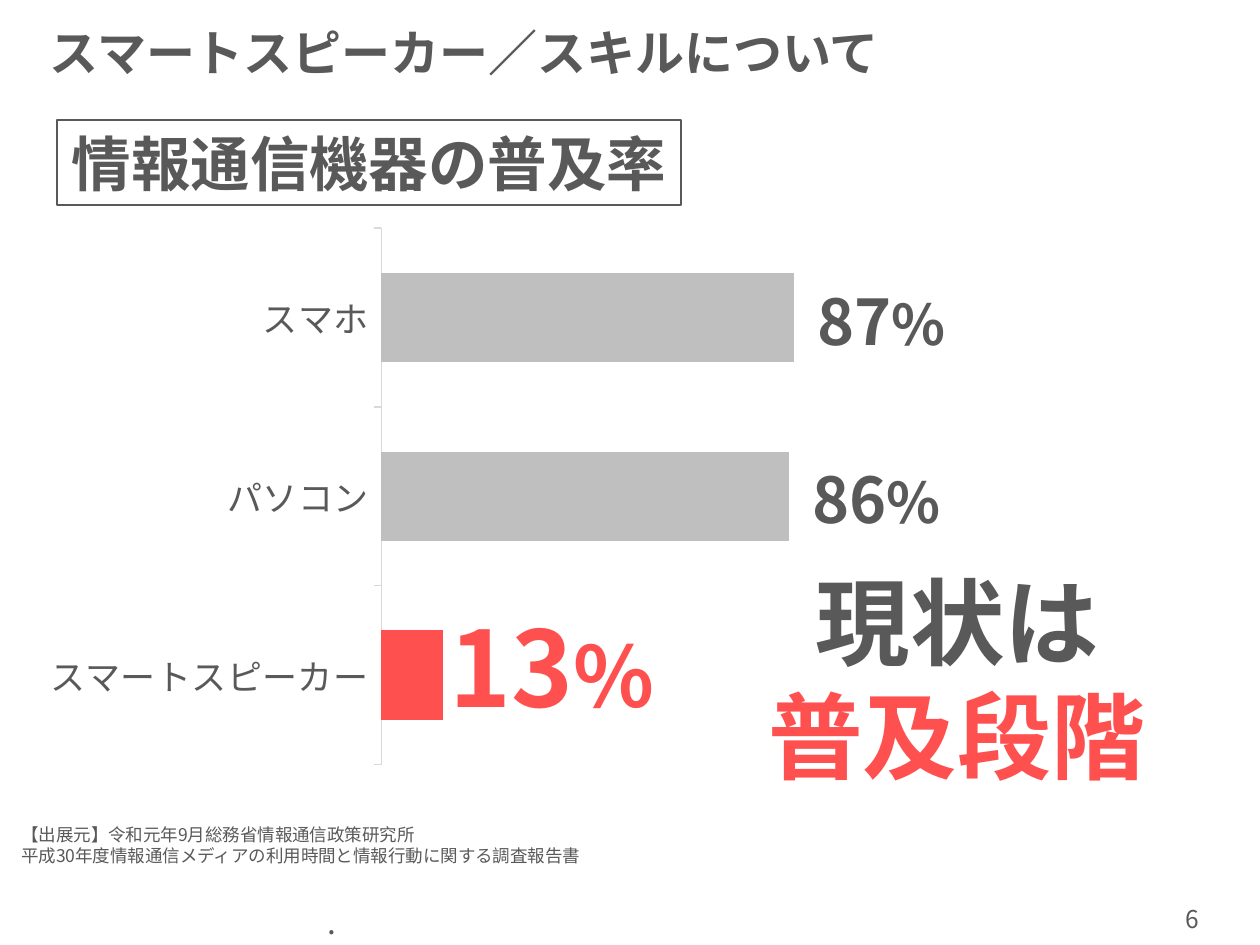
from lxml.etree import SubElement
from pptx import Presentation
from pptx.chart.data import CategoryChartData
from pptx.dml.color import RGBColor
from pptx.enum.chart import XL_CHART_TYPE, XL_TICK_LABEL_POSITION, XL_TICK_MARK
from pptx.enum.shapes import MSO_SHAPE
from pptx.enum.text import MSO_ANCHOR, MSO_AUTO_SIZE, PP_ALIGN
from pptx.oxml import parse_xml
from pptx.oxml.ns import nsdecls, qn
from pptx.util import Inches, Pt

PX = Inches(1) / 126
FONT = "Noto Sans CJK JP"
COLORS = {"text": "595959", "accent": "FF5050", "bar": "BFBFBF", "axis": "D9D9D9"}


def color(name):
    return RGBColor.from_string(COLORS[name])


def emu(*lengths):
    return [round(length * PX) for length in lengths]


class SlideBuilder:
    def __init__(self, page):
        self.page = page

    def style(self, font, size, name="text", bold=False):
        font.name, font.size, font.bold = FONT, Pt(size), bold
        font.color.rgb = color(name)

    def fill_text(self, frame, lines, align, bold):
        """Fill a frame; each line is a list of (text, size, colour) spans."""
        frame.word_wrap = True
        frame.auto_size = MSO_AUTO_SIZE.NONE
        for index, spans in enumerate(lines):
            para = frame.paragraphs[0] if index == 0 else frame.add_paragraph()
            para.alignment = align
            for text, size, name in spans:
                span = para.add_run()
                span.text = text
                self.style(span.font, size, name, bold)
                SubElement(span.font._element, qn("a:ea"), typeface=FONT)

    def title(self, at, text, size):
        box = self.page.shapes.title
        box.left, box.top, box.width, box.height = emu(*at)
        box.text_frame.vertical_anchor = MSO_ANCHOR.MIDDLE
        self.fill_text(box.text_frame, [[(text, size, "text")]], PP_ALIGN.LEFT, True)

    def text(self, at, lines, align=PP_ALIGN.LEFT, bold=False):
        box = self.page.shapes.add_textbox(*emu(*at))
        self.fill_text(box.text_frame, lines, align, bold)

    def framed_heading(self, at, text, size):
        box = self.page.shapes.add_shape(MSO_SHAPE.RECTANGLE, *emu(*at))
        box.shadow.inherit = False
        box.fill.background()
        box.line.color.rgb = color("text")
        box.line.width = Pt(1.5)
        box.text_frame.vertical_anchor = MSO_ANCHOR.MIDDLE
        self.fill_text(box.text_frame, [[(text, size, "text")]], PP_ALIGN.CENTER, True)

    def bar_chart(self, at, bars, plot):
        """Draw (category, value, colour) bars; plot holds inner x, y, w, h fractions."""
        data = CategoryChartData()
        data.categories = [category for category, _, _ in bars]
        data.add_series("Series 1", [value for _, value, _ in bars])
        chart = self.page.shapes.add_chart(
            XL_CHART_TYPE.BAR_CLUSTERED, *emu(*at), data).chart
        self.style(chart.font, 10)
        chart.has_legend = chart.has_title = False
        bar_plot = chart.plots[0]
        bar_plot.gap_width = 100
        bar_plot.vary_by_categories = False
        for index, (_, _, name) in enumerate(bars):
            fill = bar_plot.series[0].points[index].format.fill
            fill.solid()
            fill.fore_color.rgb = color(name)

        values = chart.value_axis
        values.minimum_scale, values.maximum_scale = 0, 110
        values.has_major_gridlines = False
        values.visible = False
        categories = chart.category_axis
        categories.major_tick_mark = XL_TICK_MARK.OUTSIDE
        categories.tick_label_position = XL_TICK_LABEL_POSITION.LOW
        categories.format.line.color.rgb = color("axis")
        categories.format.line.width = Pt(0.75)
        self.style(categories.tick_labels.font, 20)

        area = chart._chartSpace.chart.plotArea
        for layout in area.findall(qn("c:layout")):
            area.remove(layout)
        sizes = "".join(f'<c:{tag} val="{part}"/>' for tag, part in zip("xywh", plot))
        area.insert(0, parse_xml(
            f'<c:layout {nsdecls("c")}><c:manualLayout><c:layoutTarget val="inner"/>'
            f'<c:xMode val="edge"/><c:yMode val="edge"/>{sizes}'
            '</c:manualLayout></c:layout>'))


def main():
    deck = Presentation()
    deck.slide_width, deck.slide_height = Inches(10), Inches(7.5)
    slide = SlideBuilder(deck.slides.add_slide(deck.slide_layouts[5]))

    slide.title((37, 19, 1184, 66), "スマートスピーカー／スキルについて", 28)
    slide.text((315, 897, 627, 39), [[(".", 18, "text")]])
    slide.text((975, 898, 237, 38), [[("6", 14, "text")]], PP_ALIGN.RIGHT)
    slide.framed_heading((57, 120, 624, 85), "情報通信機器の普及率", 34)
    slide.bar_chart(
        (37, 217, 840, 559),
        [("スマートスピーカー", 15, "accent"), ("パソコン", 99, "bar"), ("スマホ", 100, "bar")],
        (0.41, 0.02, 0.54, 0.96))

    for at, number, size, unit_size, name in [
        ((789, 276, 185, 89), "87", 36, 32, "text"),
        ((784, 454, 185, 89), "86", 36, 32, "text"),
        ((398, 596, 307, 140), "13", 60, 48, "accent"),
    ]:
        slide.text(at, [[(number, size, name), ("%", unit_size, name)]],
                   PP_ALIGN.CENTER, True)

    slide.text((9, 818, 1086, 55), [
        [("【出展元】令和元年9月総務省情報通信政策研究所", 10, "text")],
        [("平成30年度情報通信メディアの利用時間と情報行動に関する調査報告書", 10, "text")]])
    slide.text((713, 558, 489, 242), [
        [("現状は", 54, "text")], [("普及段階", 54, "accent")]], PP_ALIGN.CENTER, True)
    deck.save("out.pptx")


if __name__ == "__main__":
    main()
